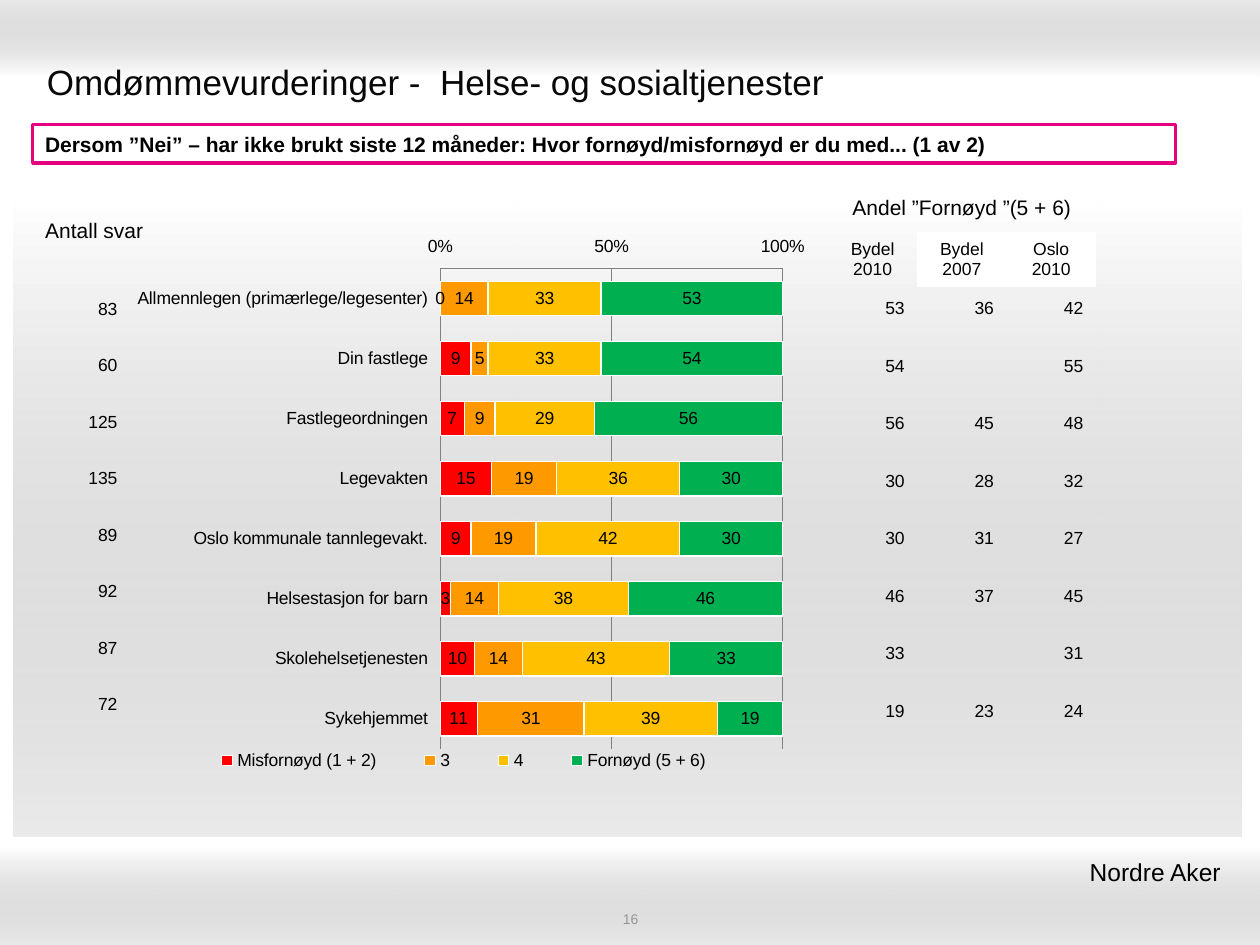
from pptx import Presentation
from pptx import oxml
from pptx.chart import data
from pptx.dml.color import RGBColor as Rgb
from pptx.enum import chart as ch, shapes, text
from pptx.oxml import ns
from pptx.util import Cm, Pt

THEME = dict(font="Arial", black="000000", title="080808", white="FFFFFF",
             grey="999999", faint="969696", axis="808080", pink="E7007E",
             huge=20, large=14, mid=12, small=10, tiny=8)
TITLE = "Omdømmevurderinger -  Helse- og sosialtjenester"
ASK = ("Dersom ”Nei” – har ikke brukt siste 12 måneder: "
       "Hvor fornøyd/misfornøyd er du med... (1 av 2)")
AREA = "Nordre Aker"
PAGE = "16"
CATS = ["Allmennlegen (primærlege/legesenter)", "Din fastlege",
        "Fastlegeordningen", "Legevakten", "Oslo kommunale tannlegevakt.",
        "Helsestasjon for barn", "Skolehelsetjenesten", "Sykehjemmet"]
SERIES = [
    ("Misfornøyd (1 + 2)", "FF0000", [0, 9, 7, 15, 9, 3, 10, 11]),
    ("3", "FF9900", [14, 5, 9, 19, 19, 14, 14, 31]),
    ("4", "FFC000", [33, 33, 29, 36, 42, 38, 43, 39]),
    ("Fornøyd (5 + 6)", "00B050", [53, 54, 56, 30, 30, 46, 33, 19]),
]
COUNTS = [[n] for n in (83, 60, 125, 135, 89, 92, 87, 72)]
SHARES = [[53, 36, 42], [54, "", 55], [56, 45, 48], [30, 28, 32],
          [30, 31, 27], [46, 37, 45], [33, "", 31], [19, 23, 24]]
HEADS = [["Andel ”Fornøyd ”(5 + 6)", "", ""],
         ["Bydel\n2010", "Bydel\n2007", "Oslo\n2010"]]
BANDS = [(0, 0, 25.4, 1.57, 270), (0, 17.07, 25.4, 1.98, 90),
         (0.28, 3.96, 24.74, 12.9, 90)]
PLOT = (0.456, 0.075, 0.493, 0.84)
KEY = (0.08, 0.91, 0.82, 0.05)
PLAIN = "{2D5ABB26-0587-4C30-8999-92F81FD0307C}"
LEFT, MID, RIGHT = text.PP_ALIGN.LEFT, text.PP_ALIGN.CENTER, text.PP_ALIGN.RIGHT


def paint(fill, hue):
    fill.solid()
    fill.fore_color.rgb = Rgb.from_string(hue)


def style(font, size, hue="black", bold=False):
    font.name, font.size, font.bold = THEME["font"], Pt(THEME[size]), bold
    font.color.rgb = Rgb.from_string(THEME[hue])


def write(frame, words, size, align=LEFT, hue="black", bold=False):
    frame.text = words
    for para in frame.paragraphs:
        para.alignment = align
        style(para.font, size, hue, bold)
        for run in para.runs:
            style(run.font, size, hue, bold)


def band(slide, x, y, w, h, turn):
    box = slide.shapes.add_shape(shapes.MSO_SHAPE.RECTANGLE,
                                 Cm(x), Cm(y), Cm(w), Cm(h))
    box.shadow.inherit = False
    box.line.fill.background()
    fade = oxml.parse_xml(
        f'<a:gradFill {ns.nsdecls("a")} rotWithShape="1"><a:gsLst>'
        f'<a:gs pos="0"><a:srgbClr val="{THEME["white"]}"/></a:gs>'
        f'<a:gs pos="100000"><a:srgbClr val="{THEME["grey"]}">'
        f'<a:alpha val="20000"/></a:srgbClr></a:gs></a:gsLst>'
        f'<a:lin ang="{turn * 60000}" scaled="0"/></a:gradFill>')
    box._element.spPr.find(ns.qn("a:prstGeom")).addnext(fade)


def note(slide, x, y, w, h, words, size, align, hue="black"):
    frame = slide.shapes.add_textbox(Cm(x), Cm(y), Cm(w), Cm(h)).text_frame
    frame.word_wrap = True
    frame.margin_right = Cm(0.38 if align == RIGHT else 0.25)
    frame.vertical_anchor = text.MSO_ANCHOR.MIDDLE
    write(frame, words, size, align, hue)


def grid(slide, x, y, wide, highs, rows, align, size="small"):
    cols = len(rows[0])
    item = slide.shapes.add_table(len(rows), cols, Cm(x), Cm(y),
                                  Cm(wide * cols), Cm(sum(highs)))
    table = item.table
    table.first_row = table.horz_banding = False
    table._tbl.tblPr.find(ns.qn("a:tableStyleId")).text = PLAIN
    for col in table.columns:
        col.width = Cm(wide)
    for r, row in enumerate(rows):
        table.rows[r].height = Cm(highs[r])
        for c, value in enumerate(row):
            cell = table.cell(r, c)
            cell.fill.background()
            cell.vertical_anchor = text.MSO_ANCHOR.MIDDLE
            write(cell.text_frame, str(value), size, align)
    return table


def place(part, spot, inner=False):
    old = part.find(ns.qn("c:layout"))
    if old is not None:
        part.remove(old)
    tags = '<c:layoutTarget val="inner"/>' if inner else ""
    tags += "".join(f'<c:{k}Mode val="edge"/>' for k in "xy")
    tags += "".join(f'<c:{k} val="{v}"/>' for k, v in zip("xywh", spot))
    node = oxml.parse_xml(f'<c:layout {ns.nsdecls("c")}><c:manualLayout>'
                          f'{tags}</c:manualLayout></c:layout>')
    if inner:
        part.insert(0, node)
    else:
        part.find(ns.qn("c:legendPos")).addnext(node)


def bars(slide):
    info = data.CategoryChartData()
    info.categories = CATS
    for name, _, vals in SERIES:
        info.add_series(name, vals)
    chart = slide.shapes.add_chart(ch.XL_CHART_TYPE.BAR_STACKED, Cm(2.49),
                                   Cm(4.55), Cm(14), Cm(11.53), info).chart
    style(chart.font, "small")
    chart.has_title = False
    chart.has_legend = True
    chart.legend.position = ch.XL_LEGEND_POSITION.BOTTOM
    chart.legend.include_in_layout = False
    place(chart.legend._element, KEY)
    place(chart._chartSpace.chart.plotArea, PLOT, True)

    plot = chart.plots[0]
    plot.gap_width, plot.overlap, plot.vary_by_categories = 75, 100, False
    for item, (_, hue, _) in zip(plot.series, SERIES):
        paint(item.format.fill, hue)
        paint(item.format.line.fill, THEME["white"])
        item.format.line.width = Pt(0.75)
        tags = item.data_labels
        tags.show_value = True
        tags.number_format, tags.number_format_is_linked = "0", False
        style(tags.font, "small")

    cat, val = chart.category_axis, chart.value_axis
    cat.reverse_order = True
    cat.major_tick_mark = ch.XL_TICK_MARK.NONE
    cat.format.line.fill.background()
    val.minimum_scale, val.maximum_scale, val.major_unit = 0, 100, 50
    val.major_tick_mark = ch.XL_TICK_MARK.INSIDE
    val.has_major_gridlines = True
    val.tick_labels.number_format = "General\\%"
    val.tick_labels.number_format_is_linked = False
    for axis in (cat, val):
        axis.tick_label_position = ch.XL_TICK_LABEL_POSITION.LOW
    for line in (val.format.line, val.major_gridlines.format.line):
        paint(line.fill, THEME["axis"])
        line.width = Pt(0.75)


def main():
    deck = Presentation()
    deck.slide_width, deck.slide_height = Cm(25.4), Cm(19.05)
    slide = deck.slides.add_slide(deck.slide_layouts[5])
    for spot in BANDS:
        band(slide, *spot)

    title = slide.shapes.title
    title.left, title.top, title.width, title.height = (
        Cm(0.69), Cm(0.95), Cm(24), Cm(1.4))
    title.text_frame.vertical_anchor = text.MSO_ANCHOR.MIDDLE
    write(title.text_frame, TITLE, "huge", hue="title")
    title._element.getparent().append(title._element)

    note(slide, 8.69, 18.34, 8.05, 0.36, PAGE, "tiny", MID, "faint")
    ask = slide.shapes.add_shape(shapes.MSO_SHAPE.RECTANGLE,
                                 Cm(0.66), Cm(2.51), Cm(23.04), Cm(0.78))
    ask.shadow.inherit = False
    paint(ask.fill, THEME["white"])
    paint(ask.line.fill, THEME["pink"])
    ask.line.width = Pt(2)
    write(ask.text_frame, ASK, "mid", bold=True)

    bars(slide)
    grid(slide, 16.69, 5.64, 1.8, [1.16] * 8, SHARES, RIGHT)
    head = grid(slide, 16.69, 3.73, 1.8, [0.95, 1], HEADS, MID)
    top = head.cell(0, 0)
    top.merge(head.cell(0, 2))
    write(top.text_frame, HEADS[0][0], "mid", MID)
    for c in (1, 2):
        paint(head.cell(1, c).fill, THEME["white"])
    grid(slide, 1.3, 5.66, 1.32, [1.14] * 8, COUNTS, RIGHT)
    grid(slide, 0.1, 3.91, 3.6, [1.5], [["Antall svar"]], MID, "mid")
    note(slide, 15.49, 17.15, 9.5, 0.86, AREA, "large", RIGHT)
    deck.save("out.pptx")


if __name__ == "__main__":
    main()
